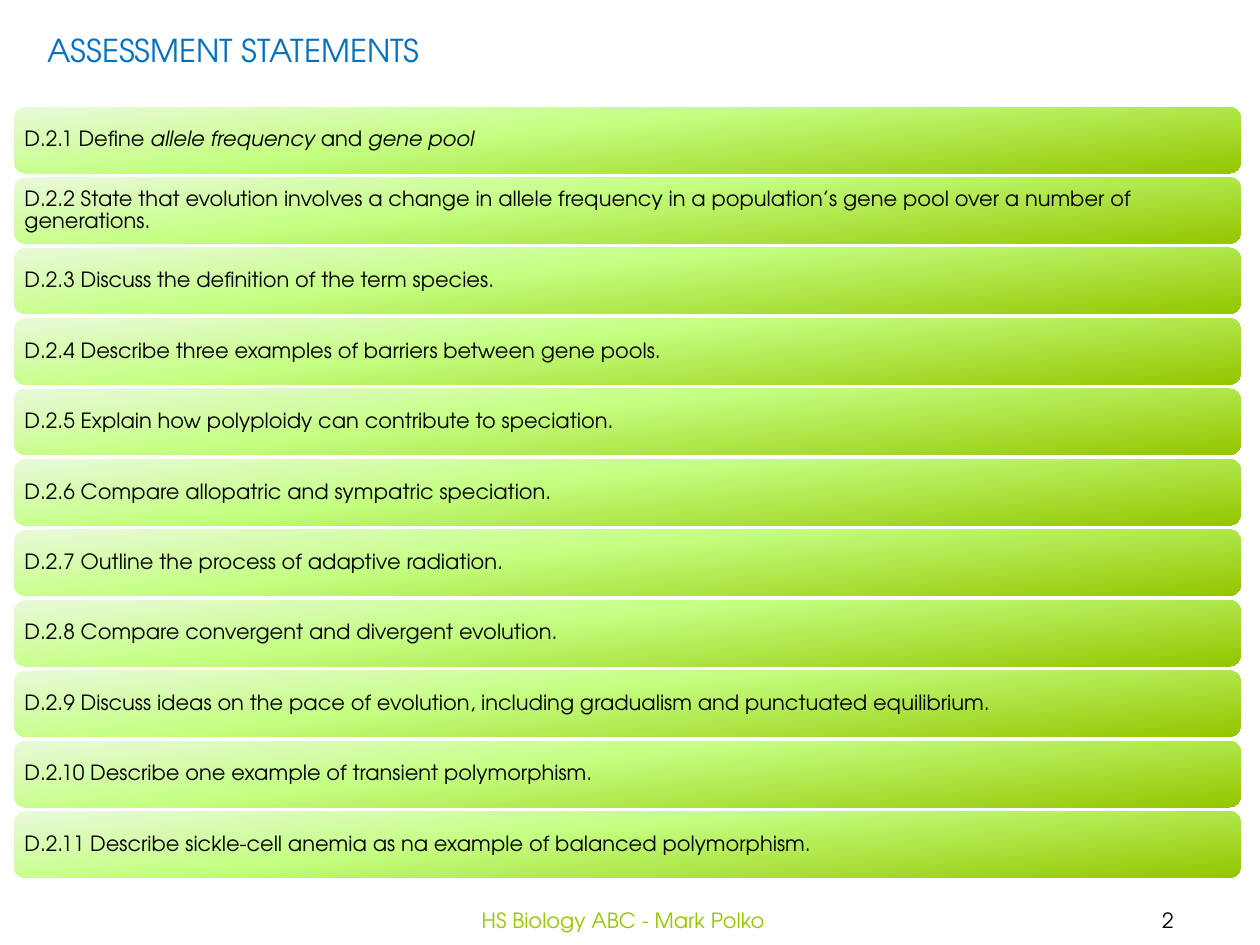
from copy import deepcopy

from pptx import Presentation
from pptx.dml.color import RGBColor
from pptx.enum import shapes, text
from pptx.util import Cm, Pt

FONT = "TeX Gyre Adventor"
BLACK = RGBColor(0x00, 0x00, 0x00)
BLUE = RGBColor(0x00, 0x70, 0xC0)
GREEN = RGBColor(0x94, 0xC6, 0x00)
GRADIENT = [
    (0, RGBColor(0xEA, 0xF9, 0xDA)),
    (0.4, RGBColor(0xC4, 0xFF, 0x82)),
    (1, GREEN),
]

# Words between asterisks are set in italics.
STATEMENTS = [
    "Define *allele frequency *and *gene pool*",
    "State that evolution involves a change in allele frequency in a "
    "population’s gene pool over a number of generations.",
    "Discuss the definition of the term species.",
    "Describe three examples of barriers between gene pools.",
    "Explain how polyploidy can contribute to speciation.",
    "Compare allopatric and sympatric speciation.",
    "Outline the process of adaptive radiation.",
    "Compare convergent and divergent evolution.",
    "Discuss ideas on the pace of evolution, including gradualism and "
    "punctuated equilibrium.",
    "Describe one example of transient polymorphism.",
    "Describe sickle-cell anemia as na example of balanced polymorphism.",
]

BAR_TOP, BAR_HEIGHT, BAR_PITCH = 2.16, 1.33, 1.42


def write(shape, content, size=12, color=BLACK, align=text.PP_ALIGN.LEFT,
          anchor=text.MSO_ANCHOR.MIDDLE, wrap=True, inset=0.25, spacing=1.0):
    """Fill the shape with one paragraph; asterisks switch italics on and off."""
    frame = shape.text_frame
    frame.word_wrap = wrap
    frame.auto_size = text.MSO_AUTO_SIZE.NONE
    frame.vertical_anchor = anchor
    frame.margin_left = frame.margin_right = Cm(inset)
    frame.margin_top = frame.margin_bottom = Cm(0.13)
    paragraph = frame.paragraphs[0]
    paragraph.alignment = align
    paragraph.line_spacing = spacing
    for index, piece in enumerate(content.split("*")):
        if piece:
            run = paragraph.add_run()
            run.text = piece
            run.font.name = FONT
            run.font.size = Pt(size)
            run.font.color.rgb = color
            run.font.italic = index % 2 == 1


def fill_gradient(shape):
    fill = shape.fill
    fill.gradient()
    fill.gradient_angle = 276  # counter-clockwise: downwards, slightly right
    stop_list = shape._element.spPr.find(".//{*}gsLst")
    stop_list.append(deepcopy(stop_list[-1]))
    for stop, (position, color) in zip(fill.gradient_stops, GRADIENT):
        stop.position = position
        stop.color.rgb = color


presentation = Presentation()
presentation.slide_width = Cm(25.4)
presentation.slide_height = Cm(19.05)
slide = presentation.slides.add_slide(presentation.slide_layouts[5])

title = slide.shapes.title
title.left, title.top, title.width, title.height = Cm(0.71), Cm(0.5), Cm(8.15), Cm(1.02)
write(title, "ASSESSMENT STATEMENTS", size=18, color=BLUE,
      anchor=text.MSO_ANCHOR.TOP, wrap=False)

for index, statement in enumerate(STATEMENTS):
    bar = slide.shapes.add_shape(
        shapes.MSO_SHAPE.ROUNDED_RECTANGLE,
        Cm(0.29), Cm(BAR_TOP + index * BAR_PITCH), Cm(24.72), Cm(BAR_HEIGHT))
    bar.shadow.inherit = False
    bar.line.fill.background()
    fill_gradient(bar)
    # The rounded corners already indent the text by 0.06 cm.
    write(bar, f"D.2.{index + 1} {statement}", inset=0.14, spacing=0.9)

for content, left, width, color in [
    ("HS Biology ABC - Mark Polko", 7.7, 9.73, GREEN),
    ("2", 21.69, 3.71, BLACK),
]:
    footer = slide.shapes.add_textbox(Cm(left), Cm(18.03), Cm(width), Cm(1.02))
    write(footer, content, color=color, align=text.PP_ALIGN.CENTER)

presentation.save("out.pptx")
